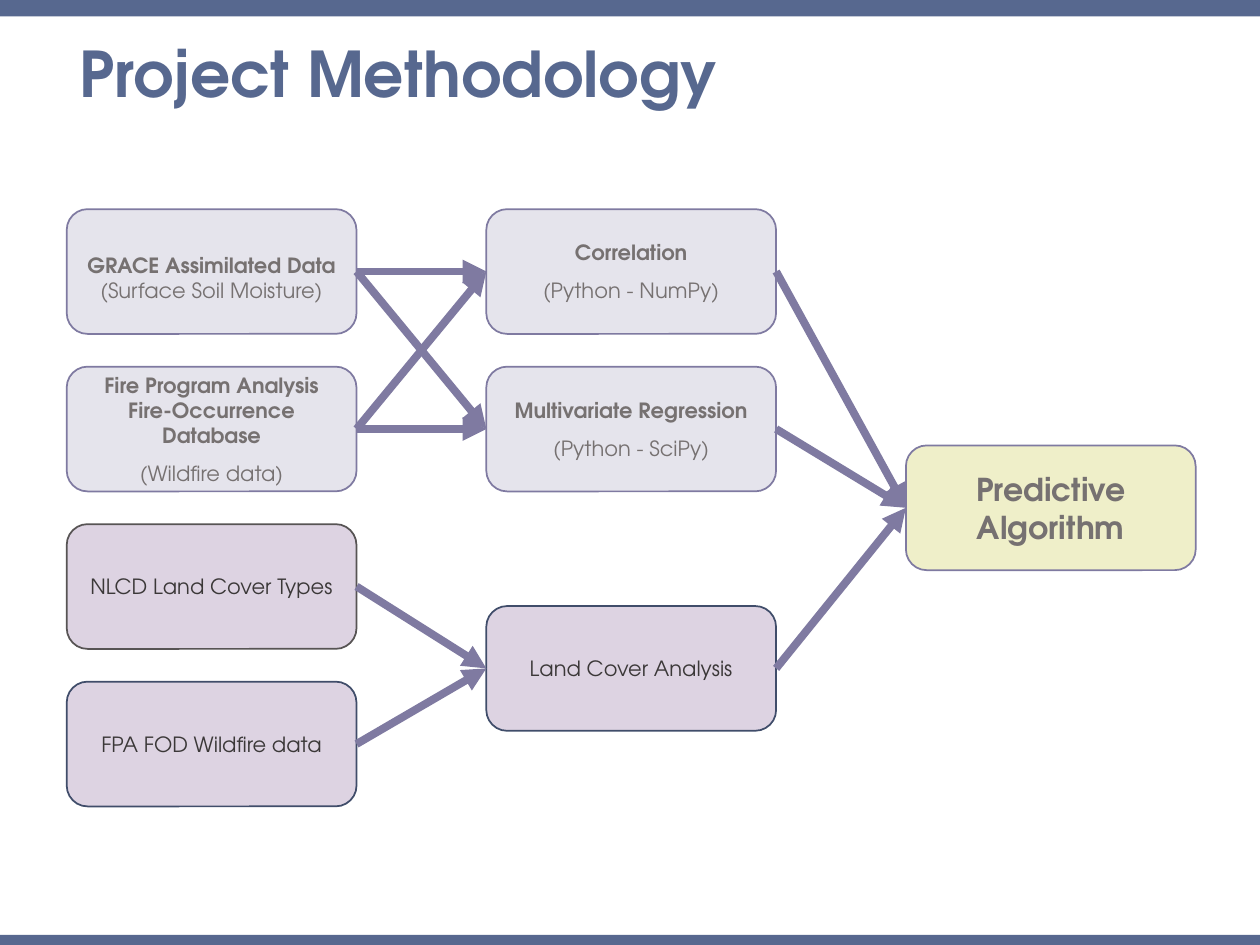
from pptx import Presentation
from pptx.dml.color import RGBColor
from pptx.enum.shapes import MSO_CONNECTOR, MSO_SHAPE
from pptx.enum.text import MSO_ANCHOR, PP_ALIGN
from pptx.oxml.ns import qn
from pptx.util import Inches, Pt
from lxml import etree

RECT = MSO_SHAPE.RECTANGLE
FLOW = MSO_SHAPE.FLOWCHART_ALTERNATE_PROCESS
ROUND = MSO_SHAPE.ROUNDED_RECTANGLE
STRAIGHT = MSO_CONNECTOR.STRAIGHT
MIDDLE = MSO_ANCHOR.MIDDLE
CENTER = PP_ALIGN.CENTER
LEFT, RIGHT = 1, 3
FONT = "TeX Gyre Adventor"
COLORS = {
    "band": "57688F", "edge": "7F7AA1", "pale": "E5E4EC", "goal": "EFEFC9",
    "land": "DDD3E2", "dark": "575454", "navy": "404D6A",
    "gray": "767171", "ink": "3B3838",
}


def color(name):
    return RGBColor.from_string(COLORS[name])


def style(para, size, tone, bold):
    for run in para.runs:
        font = run.font
        font.name, font.size, font.bold = FONT, Pt(size), bold
        font.color.rgb = color(tone)


def add_box(slide, kind, box, fill, edge=None):
    shape = slide.shapes.add_shape(kind, *map(Inches, box))
    shape.shadow.inherit = False
    shape.fill.solid()
    shape.fill.fore_color.rgb = color(fill)
    if edge:
        shape.line.color.rgb = color(edge)
        shape.line.width = Pt(1)
    else:
        shape.line.fill.background()
    return shape


def add_title(slide, box, text):
    frame = slide.shapes.add_textbox(*map(Inches, box)).text_frame
    frame.word_wrap = True
    para = frame.paragraphs[0]
    para.text = text
    para.line_spacing = 0.9
    para.space_before = Pt(10)
    style(para, 36, "band", True)


def add_node(slide, kind, box, fill, edge, lines, tone="gray", size=12):
    shape = add_box(slide, kind, box, fill, edge)
    frame = shape.text_frame
    frame.word_wrap = True
    frame.vertical_anchor = MIDDLE
    frame.text = "\n".join(text for text, bold, gap in lines)
    for para, (text, bold, gap) in zip(frame.paragraphs, lines):
        para.alignment = CENTER
        para.line_spacing = gap
        style(para, size, tone, bold)
    return shape


def add_arrow(slide, start, end):
    link = slide.shapes.add_connector(STRAIGHT, 0, 0, 0, 0)
    link.begin_connect(start, RIGHT)
    link.end_connect(end, LEFT)
    link.line.color.rgb = color("edge")
    link.line.width = Pt(4.5)
    etree.SubElement(link.line._get_or_add_ln(), qn("a:tailEnd"), type="triangle")
    etree.SubElement(link._element.spPr, qn("a:effectLst"))


def add_flow(slide, box):
    left, top, width, height = box
    wide, high, step = 2.3, 0.99, 1.25
    pitch = (width - wide) / 2

    def node(col, row, kind, *rest, **more):
        spot = (left + col * pitch, top + row * step, wide, high)
        return add_node(slide, kind, spot, *rest, **more)

    def study(col, row, head, note, first=1, last=1.5):
        lines = [(head, True, first), (note, False, last)]
        return node(col, row, FLOW, "pale", "edge", lines)

    def land(col, row, text, edge="navy"):
        return node(col, row, ROUND, "land", edge, [(text, False, 1)], tone="ink")

    soil = study(0, 0, "GRACE Assimilated Data", "(Surface Soil Moisture)", 1.5, 1)
    fire = study(0, 1, "Fire Program Analysis Fire-Occurrence Database", "(Wildfire data)")
    match = study(1, 0, "Correlation", "(Python - NumPy)")
    fit = study(1, 1, "Multivariate Regression", "(Python - SciPy)")
    cover = land(0, 2, "NLCD Land Cover Types", "dark")
    wild = land(0, 3, "FPA FOD Wildfire data")
    terrain = land(1, 2.52, "Land Cover Analysis")
    goal = node(2, 1.5, FLOW, "goal", "edge", [("Predictive Algorithm", True, 1)], size=18)

    for start, end in [
        (fire, fit), (fire, match), (match, goal), (soil, fit), (soil, match),
        (fit, goal), (wild, terrain), (cover, terrain), (terrain, goal),
    ]:
        add_arrow(slide, start, end)


def main():
    deck = Presentation()
    deck.slide_width, deck.slide_height = Inches(10), Inches(7.5)
    slide = deck.slides.add_slide(deck.slide_layouts[6])
    add_box(slide, RECT, (0, 0, 10, 0.13), "band")
    add_box(slide, RECT, (0, 7.42, 10, 0.08), "band")
    add_title(slide, (0.53, 0.29, 8.73, 1.26), "Project Methodology")
    add_flow(slide, (0.53, 1.66, 8.96, 4.75))
    deck.save("out.pptx")


if __name__ == "__main__":
    main()
